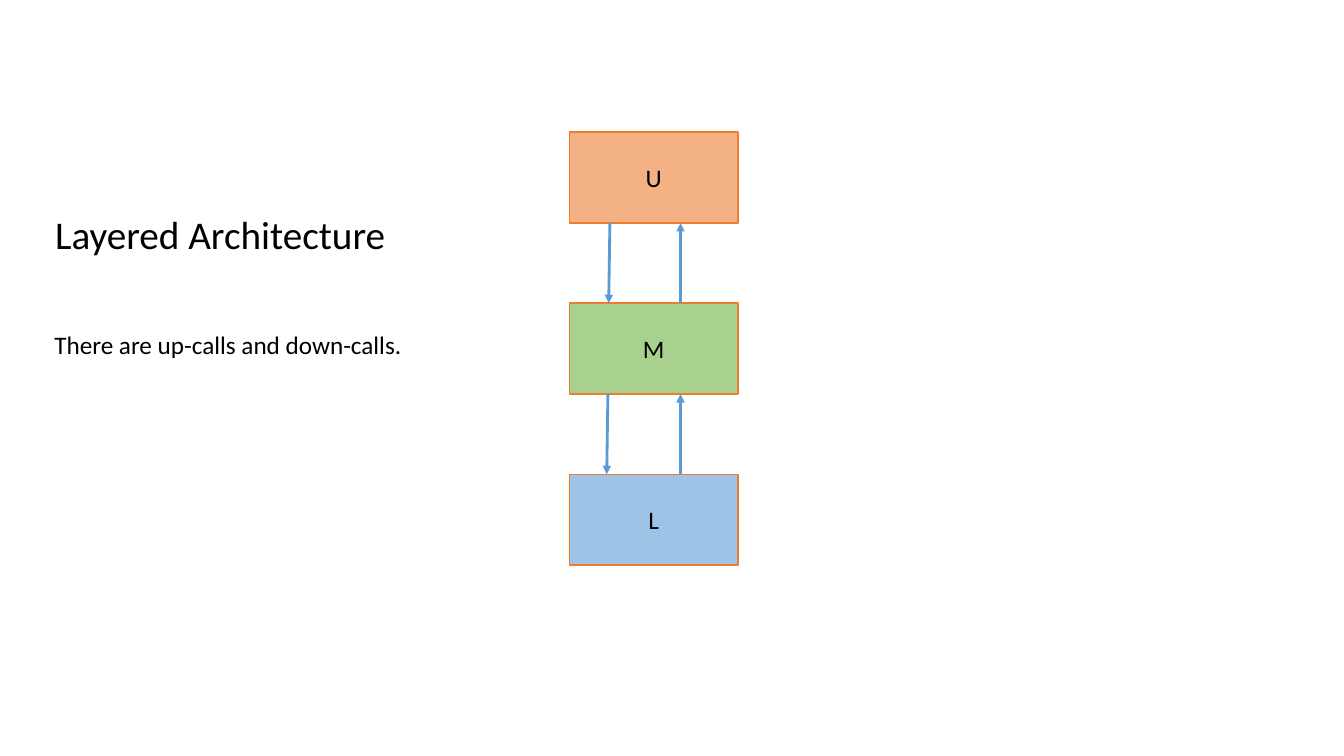
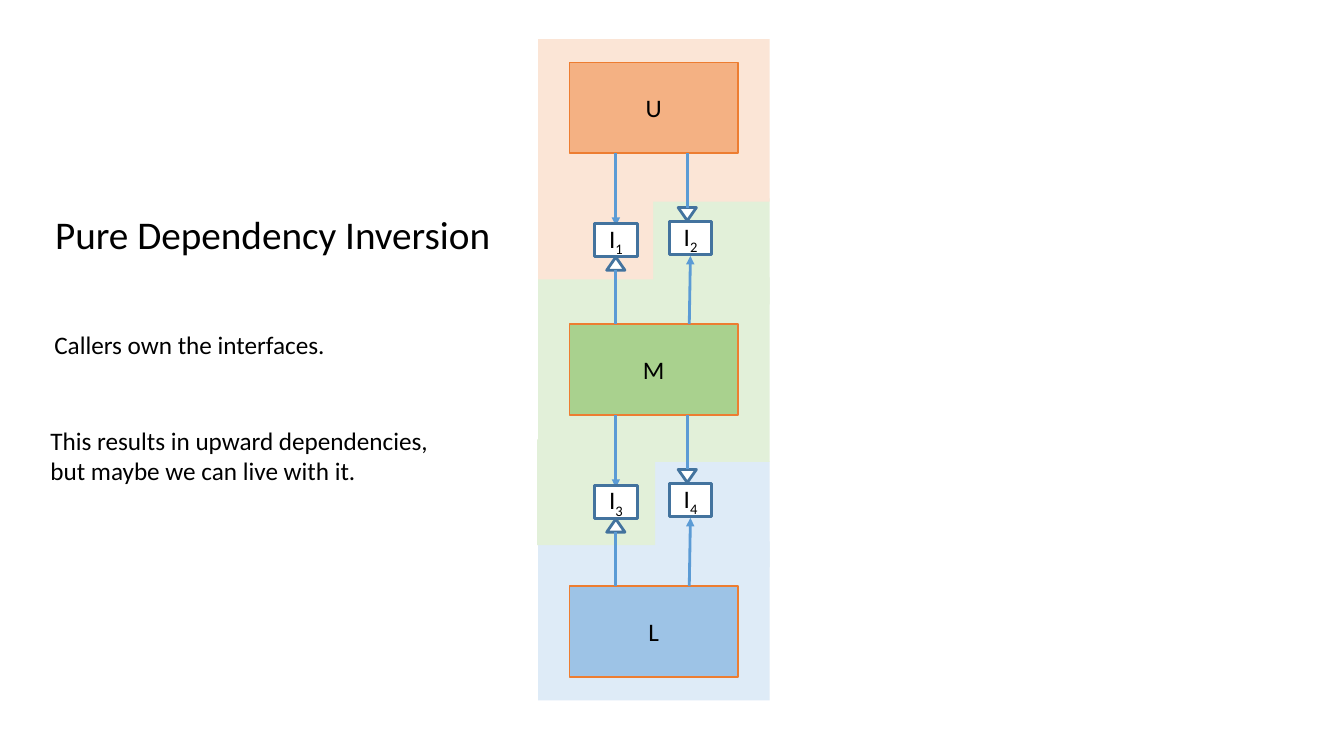
"""Build two slides on calls and dependencies between layers."""
from dataclasses import dataclass

from lxml.etree import SubElement
from pptx import Presentation
from pptx.dml.color import RGBColor
from pptx.enum.shapes import MSO_CONNECTOR, MSO_SHAPE
from pptx.enum.text import MSO_ANCHOR, MSO_AUTO_SIZE, PP_ALIGN
from pptx.oxml.ns import qn
from pptx.util import Cm, Pt


@dataclass(frozen=True)
class Theme:
    font: str = "Calibri"
    title_size: int = 28
    body_size: int = 18
    text: str = "000000"
    paper: str = "FFFFFF"
    layer_edge: str = "ED7D31"
    interface_edge: str = "43739E"
    call: str = "5B9BD5"
    layers: tuple = (("U", "F4B183"), ("M", "A9D18E"), ("L", "9DC3E6"))
    u_zone: str = "FBE5D6"
    m_zone: str = "E2F0D9"
    l_zone: str = "DEEBF7"


LAYER_X, LAYER_W, LAYER_H = 14.35, 4.25, 2.29
INTERFACE_W, INTERFACE_H = 1.07, 0.82
TIP_W, TIP_H = 0.46, 0.33


class Deck:
    def __init__(self, theme):
        self.theme = theme
        self.prs = Presentation()
        self.prs.slide_width, self.prs.slide_height = Cm(33.87), Cm(19.05)
        self.s = None

    def slide(self, title):
        self.s = self.prs.slides.add_slide(self.prs.slide_layouts[6])
        text, width = title
        self.text(1.14, 5.18, width, 1.45, [text], self.theme.title_size)

    def run(self, p, text, size, subscript=False):
        r = p.add_run()
        r.text = text
        style = {"name": self.theme.font, "size": Pt(size)}
        for key, value in style.items():
            setattr(r.font, key, value)
        r.font.color.rgb = RGBColor.from_string(self.theme.text)
        if subscript:
            r.font._element.set("baseline", "-25000")

    def text(self, x, y, w, h, lines, size=None):
        tf = self.s.shapes.add_textbox(Cm(x), Cm(y), Cm(w), Cm(h)).text_frame
        style = {"word_wrap": False, "auto_size": MSO_AUTO_SIZE.SHAPE_TO_FIT_TEXT}
        for key, value in style.items():
            setattr(tf, key, value)
        for i, line in enumerate(lines):
            p = tf.add_paragraph() if i else tf.paragraphs[0]
            self.run(p, line, size or self.theme.body_size)

    def shape(self, x, y, w, h, fill, edge=None, width=1, label="", index="",
              kind=MSO_SHAPE.RECTANGLE, parent=None):
        sp = (parent or self.s).shapes.add_shape(kind, Cm(x), Cm(y), Cm(w), Cm(h))
        sp.shadow.inherit = False
        sp.fill.solid()
        sp.fill.fore_color.rgb = RGBColor.from_string(fill)
        if edge:
            sp.line.color.rgb = RGBColor.from_string(edge)
            sp.line.width = Pt(width)
        else:
            sp.line.fill.background()
        if label:
            tf = sp.text_frame
            tf.vertical_anchor = MSO_ANCHOR.MIDDLE
            p = tf.paragraphs[0]
            p.alignment = PP_ALIGN.CENTER
            self.run(p, label, self.theme.body_size)
            if index:
                self.run(p, index, self.theme.body_size, subscript=True)
        return sp

    def line(self, x1, y1, x2, y2, arrow=True, parent=None):
        cn = (parent or self.s).shapes.add_connector(
            MSO_CONNECTOR.STRAIGHT, Cm(x1), Cm(y1), Cm(x2), Cm(y2))
        cn.line.color.rgb = RGBColor.from_string(self.theme.call)
        cn.line.width = Pt(2)
        if arrow:
            SubElement(cn.line._get_or_add_ln(), qn("a:tailEnd"), type="triangle")
        SubElement(cn._element.spPr, qn("a:effectLst"))

    def layers(self, top, pitch):
        tops = [top + i * pitch for i in range(len(self.theme.layers))]
        for y, (name, fill) in zip(tops, self.theme.layers):
            self.shape(LAYER_X, y, LAYER_W, LAYER_H, fill, self.theme.layer_edge, label=name)
        return [(y + LAYER_H, below) for y, below in zip(tops, tops[1:])]

    def interface(self, x, y, index):
        self.shape(x, y, INTERFACE_W, INTERFACE_H, self.theme.paper,
                   self.theme.interface_edge, 2.25, "I", index)

    def implementation(self, x, tip_y, layer_y):
        down = layer_y < tip_y
        base_y = tip_y - TIP_H if down else tip_y + TIP_H
        group = self.s.shapes.add_group_shape()
        tip = self.shape(x - TIP_W / 2, min(tip_y, base_y), TIP_W, TIP_H,
                         self.theme.paper, self.theme.interface_edge, 2,
                         kind=MSO_SHAPE.ISOSCELES_TRIANGLE, parent=group)
        tip.rotation = 180 if down else 0
        self.line(x, base_y, x, layer_y, arrow=False, parent=group)


def layered_architecture(deck):
    deck.slide(("Layered Architecture", 8.92))
    for i, (upper, lower) in enumerate(deck.layers(3.33, 4.31)):
        down_x = 15.37 - 0.05 * i
        deck.line(down_x, upper, down_x - 0.03, lower)
        deck.line(17.15, lower, 17.15, upper)
    deck.text(1.12, 8.18, 9.37, 1.02, ["There are up-calls and down-calls."])


def dependency_inversion(deck):
    deck.slide(("Pure Dependency Inversion", 11.61))
    theme = deck.theme
    zones = [
        (16.43, 11.63, 2.97, 2.67, theme.l_zone),
        (13.56, 13.64, 5.84, 4.01, theme.l_zone),
        (13.54, 11.07, 2.97, 2.67, theme.m_zone),
        (16.43, 5, 2.97, 2.67, theme.m_zone),
        (13.56, 6.99, 5.84, 4.65, theme.m_zone),
        (13.56, 4.37, 2.9, 2.67, theme.u_zone),
        (13.56, 0.99, 5.84, 4.09, theme.u_zone),
    ]
    for zone in zones:
        deck.shape(*zone)
    for i, (upper, lower) in enumerate(deck.layers(1.57, 6.6)):
        left_y, right_y = upper + 1.78, upper + 1.73
        deck.line(15.52, upper, 15.52, left_y + 0.05)
        deck.line(17.37, lower, 17.4, right_y + INTERFACE_H + 0.04)
        deck.interface(14.99, left_y, str(2 * i + 1))
        deck.implementation(15.52, left_y + INTERFACE_H + 0.02, lower)
        deck.interface(16.87, right_y, str(2 * i + 2))
        deck.implementation(17.32, right_y - 0.03, upper)
    deck.text(1.12, 8.18, 7.42, 1.02, ["Callers own the interfaces."])
    deck.text(1.02, 10.59, 10.16, 1.8,
              ["This results in upward dependencies,", "but maybe we can live with it."])


def main():
    deck = Deck(Theme())
    layered_architecture(deck)
    dependency_inversion(deck)
    deck.prs.save("out.pptx")


if __name__ == "__main__":
    main()
